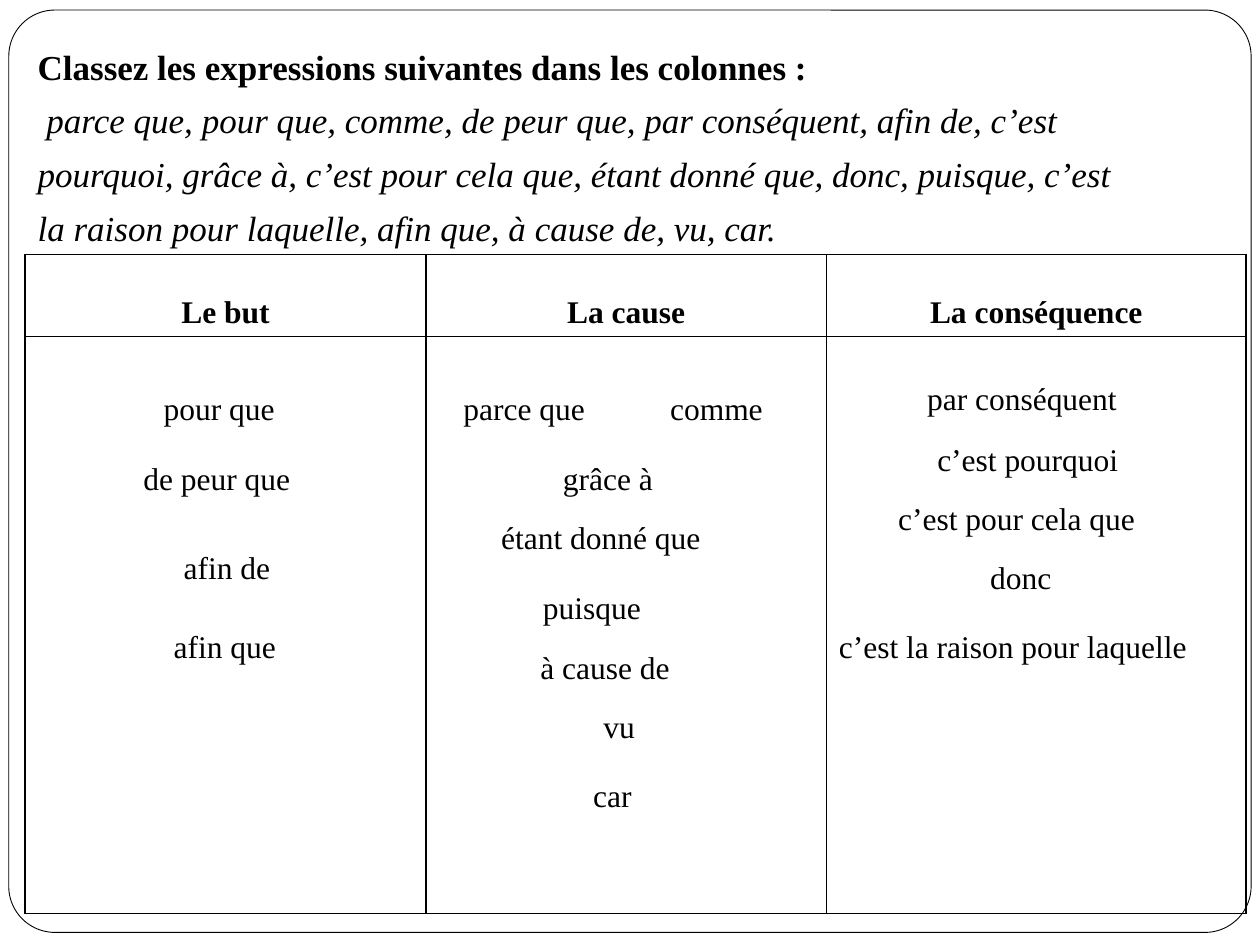
from dataclasses import dataclass

from lxml import etree
from pptx import Presentation
from pptx import util as u
from pptx.dml.color import RGBColor
from pptx.enum import shapes, text
from pptx.oxml import ns

SLIDE_W, SLIDE_H = 10, 7.5
COLORS = {"ink": "000000", "paper": "FFFFFF"}
FONT = "Times New Roman"
TABLE_LEFT, TABLE_TOP = 0.2, 2.02
COL_WIDTHS = [3.18, 3.18, 3.33]
ROW_HEIGHTS = [0.65, 4.58]
BODY_TOP = TABLE_TOP + ROW_HEIGHTS[0]
LABEL_H = 0.4
INSTRUCTIONS = [
    "Classez les expressions suivantes dans les colonnes :",
    "parce que, pour que, comme, de peur que, par conséquent, afin de, c’est",
    "pourquoi, grâce à, c’est pour cela que, étant donné que, donc, puisque, c’est",
    "la raison pour laquelle, afin que, à cause de, vu, car.",
]


@dataclass(frozen=True)
class Label:
    """An expression, offset from the top left of its column's body cell."""
    words: str
    dx: float
    dy: float
    width: float


@dataclass(frozen=True)
class Column:
    heading: str
    labels: list[Label]


COLUMNS = [
    Column("Le but", [
        Label("pour que", 1.0, 0.37, 1.21),
        Label("de peur que", 0.84, 0.92, 1.56),
        Label("afin de", 1.16, 1.63, 0.97),
        Label("afin que", 1.08, 2.26, 1.11),
    ]),
    Column("La cause", [
        Label("parce que", 0.2, 0.37, 1.32),
        Label("comme", 1.84, 0.37, 1.04),
        Label("grâce à", 0.99, 0.92, 1.04),
        Label("étant donné que", 0.5, 1.39, 2.04),
        Label("puisque", 0.83, 1.95, 1.09),
        Label("à cause de", 0.81, 2.42, 1.45),
        Label("vu", 1.31, 2.89, 0.47),
        Label("car", 1.23, 3.44, 0.55),
    ]),
    Column("La conséquence", [
        Label("par conséquent", 0.7, 0.29, 1.95),
        Label("c’est pourquoi", 0.78, 0.77, 1.78),
        Label("c’est pour cela que", 0.47, 1.24, 2.33),
        Label("donc", 1.2, 1.71, 0.75),
        Label("c’est la raison pour laquelle", 0, 2.26, 3.27),
    ]),
]


def color(name: str) -> RGBColor:
    return RGBColor.from_string(COLORS[name])


def add_run(p, words: str, size: float, bold=False, italic=False) -> None:
    r = p.add_run()
    r.text = words
    r.font.name = FONT
    r.font.size = u.Pt(size)
    r.font.bold = bold
    r.font.italic = italic
    r.font.color.rgb = color("ink")


def add_textbox(slide, left: float, top: float, width: float, height: float):
    box = slide.shapes.add_textbox(*map(u.Inches, (left, top, width, height)))
    box.text_frame.word_wrap = True
    return box.text_frame


def draw_frame(slide) -> None:
    sp = slide.shapes.add_shape(
        shapes.MSO_SHAPE.ROUNDED_RECTANGLE,
        *map(u.Inches, (0.07, 0.08, SLIDE_W - 0.14, SLIDE_H - 0.18)))
    sp.adjustments[0] = 0.05
    sp.shadow.inherit = False
    sp.fill.solid()
    sp.fill.fore_color.rgb = color("paper")
    sp.line.color.rgb = color("ink")
    sp.line.width = u.Pt(0.5)


def draw_instructions(slide) -> None:
    tf = add_textbox(slide, 0.2, 0.31, 9.61, 1.7)
    for i, line in enumerate(INSTRUCTIONS):
        p = tf.paragraphs[0] if i == 0 else tf.add_paragraph()
        if i:
            p.space_before = u.Pt(6.7)
        if i == 1:
            p._p.get_or_add_pPr().set("indent", str(u.Inches(0.07)))
        add_run(p, line, 20, bold=i == 0, italic=i > 0)


def set_borders(cell) -> None:
    tc_pr = cell._tc.get_or_add_tcPr()
    for i, side in enumerate(("lnL", "lnR", "lnT", "lnB")):
        ln = etree.Element(ns.qn(f"a:{side}"), w=str(u.Pt(1)))
        fill = etree.SubElement(ln, ns.qn("a:solidFill"))
        etree.SubElement(fill, ns.qn("a:srgbClr"), val=COLORS["ink"])
        tc_pr.insert(i, ln)


def draw_table(slide) -> None:
    table = slide.shapes.add_table(
        len(ROW_HEIGHTS), len(COLUMNS),
        *map(u.Inches, (TABLE_LEFT, TABLE_TOP, sum(COL_WIDTHS),
                        sum(ROW_HEIGHTS)))).table
    table.first_row = table.horz_banding = False
    for col, width in zip(table.columns, COL_WIDTHS):
        col.width = u.Inches(width)
    for row, height in zip(table.rows, ROW_HEIGHTS):
        row.height = u.Inches(height)
    for cell in table.iter_cells():
        cell.fill.background()
        set_borders(cell)
    for i, column in enumerate(COLUMNS):
        cell = table.cell(0, i)
        cell.vertical_anchor = text.MSO_ANCHOR.BOTTOM
        p = cell.text_frame.paragraphs[0]
        p.alignment = text.PP_ALIGN.CENTER
        add_run(p, column.heading, 18, bold=True)


def draw_labels(slide) -> None:
    for i, column in enumerate(COLUMNS):
        left = TABLE_LEFT + sum(COL_WIDTHS[:i])
        for label in column.labels:
            tf = add_textbox(slide, left + label.dx, BODY_TOP + label.dy,
                             label.width, LABEL_H)
            add_run(tf.paragraphs[0], label.words, 18)


def main() -> None:
    prs = Presentation()
    prs.slide_width, prs.slide_height = u.Inches(SLIDE_W), u.Inches(SLIDE_H)
    slide = prs.slides.add_slide(prs.slide_layouts[6])
    draw_frame(slide)
    draw_instructions(slide)
    draw_table(slide)
    draw_labels(slide)
    prs.save("out.pptx")


if __name__ == "__main__":
    main()
